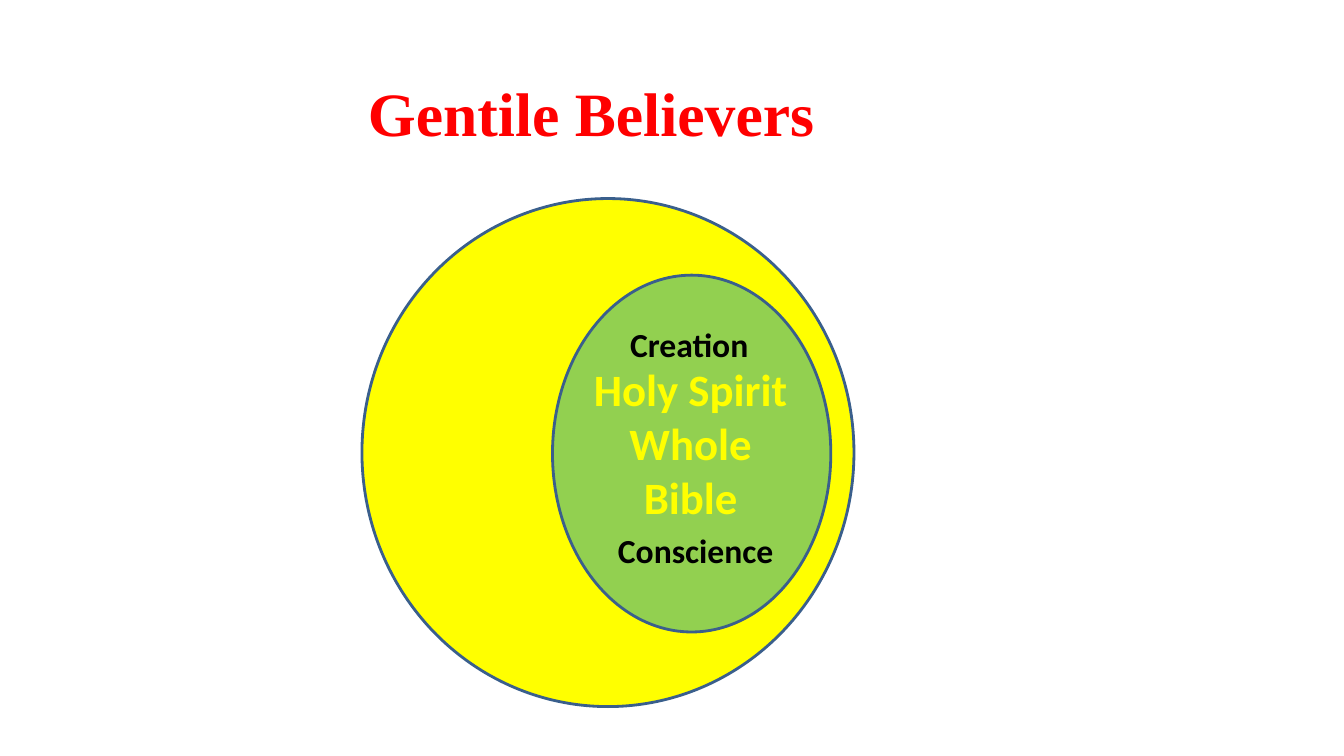
from dataclasses import dataclass

from pptx import Presentation
from pptx.dml.color import RGBColor
from pptx.enum.shapes import MSO_SHAPE
from pptx.enum.text import MSO_AUTO_SIZE, PP_ALIGN
from pptx.slide import Slide
from pptx.util import Inches, Pt

WIDTH, HEIGHT = Inches(13.33), Inches(7.5)
YELLOW, OUTLINE = "FFFF00", "3A5F8C"


@dataclass
class Area:
    """Position and size in percent of the slide's width and height."""
    left: float
    top: float
    width: float
    height: float

    def lengths(self) -> tuple[int, int, int, int]:
        return (int(WIDTH * self.left / 100), int(HEIGHT * self.top / 100),
                int(WIDTH * self.width / 100), int(HEIGHT * self.height / 100))


@dataclass
class Oval:
    area: Area
    fill: str


@dataclass
class Label:
    area: Area
    lines: list[str]
    size: int
    color: str
    font: str = "Calibri"
    align: PP_ALIGN = PP_ALIGN.CENTER


OVALS = [
    Oval(Area(26.93, 26.27, 36.61, 67.2), YELLOW),
    Oval(Area(41.11, 36.4, 20.71, 47.2), "92D050"),
]
LABELS = [
    Label(Area(23.71, 9.2, 40.59, 11.2), ["Gentile Believers"], 44, "FF0000",
          font="Times New Roman"),
    Label(Area(46.14, 42.13, 10.65, 6.67), ["Creation"], 24, "000000",
          align=PP_ALIGN.LEFT),
    Label(Area(45.24, 69.47, 16.5, 6.8), ["Conscience"], 24, "000000",
          align=PP_ALIGN.LEFT),
    Label(Area(43.14, 47.2, 16.5, 22.93), ["Holy Spirit", "Whole", "Bible"], 32, YELLOW),
]


def color(value: str) -> RGBColor:
    return RGBColor.from_string(value)


def draw_oval(slide: Slide, oval: Oval) -> None:
    shape = slide.shapes.add_shape(MSO_SHAPE.OVAL, *oval.area.lengths())
    shape.shadow.inherit = False
    shape.fill.solid()
    shape.fill.fore_color.rgb = color(oval.fill)
    shape.line.color.rgb = color(OUTLINE)
    shape.line.width = Pt(2)


def draw_label(slide: Slide, label: Label) -> None:
    frame = slide.shapes.add_textbox(*label.area.lengths()).text_frame
    frame.word_wrap = True
    frame.auto_size = MSO_AUTO_SIZE.SHAPE_TO_FIT_TEXT
    frame.text = "\n".join(label.lines)
    for paragraph in frame.paragraphs:
        paragraph.alignment = label.align
        paragraph.font.name = label.font
        paragraph.font.size = Pt(label.size)
        paragraph.font.bold = True
        paragraph.font.color.rgb = color(label.color)


def main() -> None:
    presentation = Presentation()
    presentation.slide_width, presentation.slide_height = WIDTH, HEIGHT
    slide = presentation.slides.add_slide(presentation.slide_layouts[6])

    # Nested ovals
    for oval in OVALS:
        draw_oval(slide, oval)

    # Title and the words inside the inner oval
    for label in LABELS:
        draw_label(slide, label)

    presentation.save("out.pptx")


if __name__ == "__main__":
    main()
